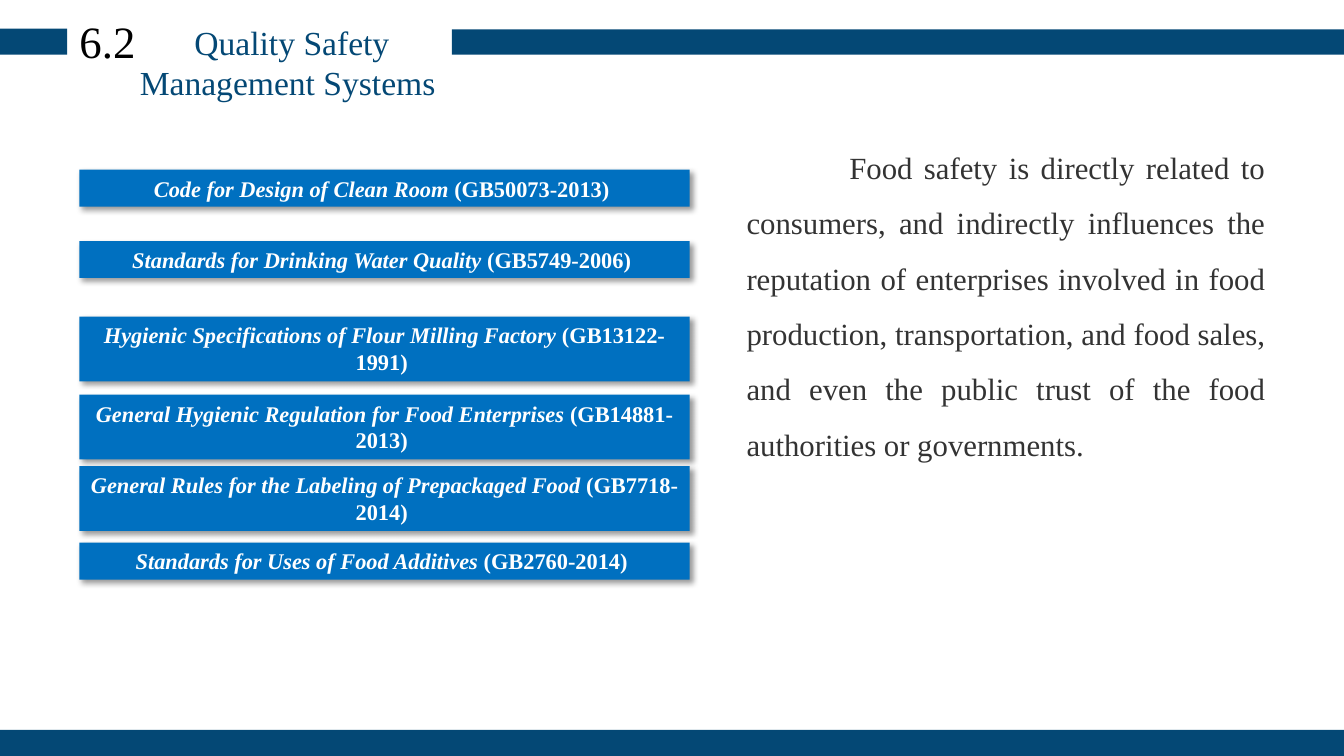
from dataclasses import dataclass

from lxml.etree import SubElement
from pptx import Presentation
from pptx.dml.color import RGBColor
from pptx.enum.shapes import MSO_SHAPE
from pptx.enum.text import MSO_ANCHOR, MSO_AUTO_SIZE, PP_ALIGN
from pptx.oxml.ns import qn
from pptx.util import Emu, Inches, Pt

FONT = "Times New Roman"
HEX = {"navy": "044875", "blue": "0070C0", "white": "FFFFFF",
       "black": "000000", "grey": "333333"}
COLS, ROWS = 160, 90


@dataclass
class Box:
    """An area in grid columns and rows."""
    x: float
    y: float
    w: float
    h: float


@dataclass
class Rule:
    """One food standard: its name, code, top row and line count."""
    name: str
    code: str
    top: float
    lines: int = 1


BARS = [Box(0, 3.4, 8, 3.1), Box(53.8, 3.5, 106.2, 3), Box(0, 86.9, 160, 3.1)]
RULES = [
    Rule("Code for Design of Clean Room", " (GB50073-2013) ", 20.2),
    Rule("Standards for Drinking Water Quality", " (GB5749-2006) ", 28.7),
    Rule("Hygienic Specifications of Flour Milling Factory ",
         "(GB13122-1991) ", 37.7, 2),
    Rule("General Hygienic Regulation for Food Enterprises ",
         "(GB14881-2013) ", 47, 2),
    Rule("General Rules for the Labeling of Prepackaged Food ",
         "(GB7718-2014) ", 55.5, 2),
    Rule("Standards for Uses of Food Additives ", "(GB2760-2014) ", 64.6),
]
BODY = ("Food safety is directly related to consumers, and indirectly "
        "influences the reputation of enterprises involved in food production, "
        "transportation, and food sales, and even the public trust of the food "
        "authorities or governments.")

deck = Presentation()
deck.slide_width, deck.slide_height = Inches(13.3333), Inches(7.5)
slide = deck.slides.add_slide(deck.slide_layouts[5])
shapes = slide.shapes


def place(box: Box) -> list[Emu]:
    col, row = deck.slide_width / COLS, deck.slide_height / ROWS
    return [Emu(round(n)) for n in
            (box.x * col, box.y * row, box.w * col, box.h * row)]


def write(shape, parts: list[str], size: int, tone: str,
          align=PP_ALIGN.CENTER, bold: bool = False):
    frame = shape.text_frame
    frame.word_wrap = True
    frame.auto_size = MSO_AUTO_SIZE.NONE
    frame.vertical_anchor = MSO_ANCHOR.TOP
    para = frame.paragraphs[0]
    para.alignment = align
    for part in parts:
        run = para.add_run()
        run.text = part
        font = run.font
        font.name, font.size, font.bold = FONT, Pt(size), bold
        font.color.rgb = RGBColor.from_string(HEX[tone])
    return para


def block(box: Box, tone: str):
    shape = shapes.add_shape(MSO_SHAPE.RECTANGLE, *place(box))
    shape.shadow.inherit = False
    shape.fill.solid()
    shape.fill.fore_color.rgb = RGBColor.from_string(HEX[tone])
    shape.line.fill.background()
    return shape


def shade(shape) -> None:
    effects = shape._element.spPr.find(qn("a:effectLst"))
    drop = SubElement(effects, qn("a:outerShdw"), blurRad=str(Pt(4)),
                      dist=str(Pt(3)), dir="2700000", algn="tl",
                      rotWithShape="0")
    tint = SubElement(drop, qn("a:srgbClr"), val=HEX["black"])
    SubElement(tint, qn("a:alpha"), val="40000")


# Bars at the top and bottom
for bar in BARS:
    block(bar, "navy")

# Title and section number
title = shapes.title
title.left, title.top, title.width, title.height = place(
    Box(11.6, 2, 46.3, 10.9))
write(title, ["Quality Safety Management Systems "], 24, "navy")
label = shapes.add_textbox(*place(Box(8, 1.1, 9.6, 7.7)))
write(label, ["6.2"], 32, "black")

# Body text
body = shapes.add_textbox(*place(Box(87.7, 14.9, 64.1, 40.4)))
para = write(body, [BODY], 22, "grey", PP_ALIGN.JUSTIFY)
para.line_spacing = 1.5
para._p.get_or_add_pPr().set("indent", str(Inches(1.02)))

# List of standards
for rule in RULES:
    high = 4.4 if rule.lines == 1 else 7.7
    shape = block(Box(9.45, rule.top, 72.65, high), "blue")
    shade(shape)
    para = write(shape, [rule.name, rule.code], 16, "white", bold=True)
    para.runs[0].font.italic = True

deck.save("out.pptx")
